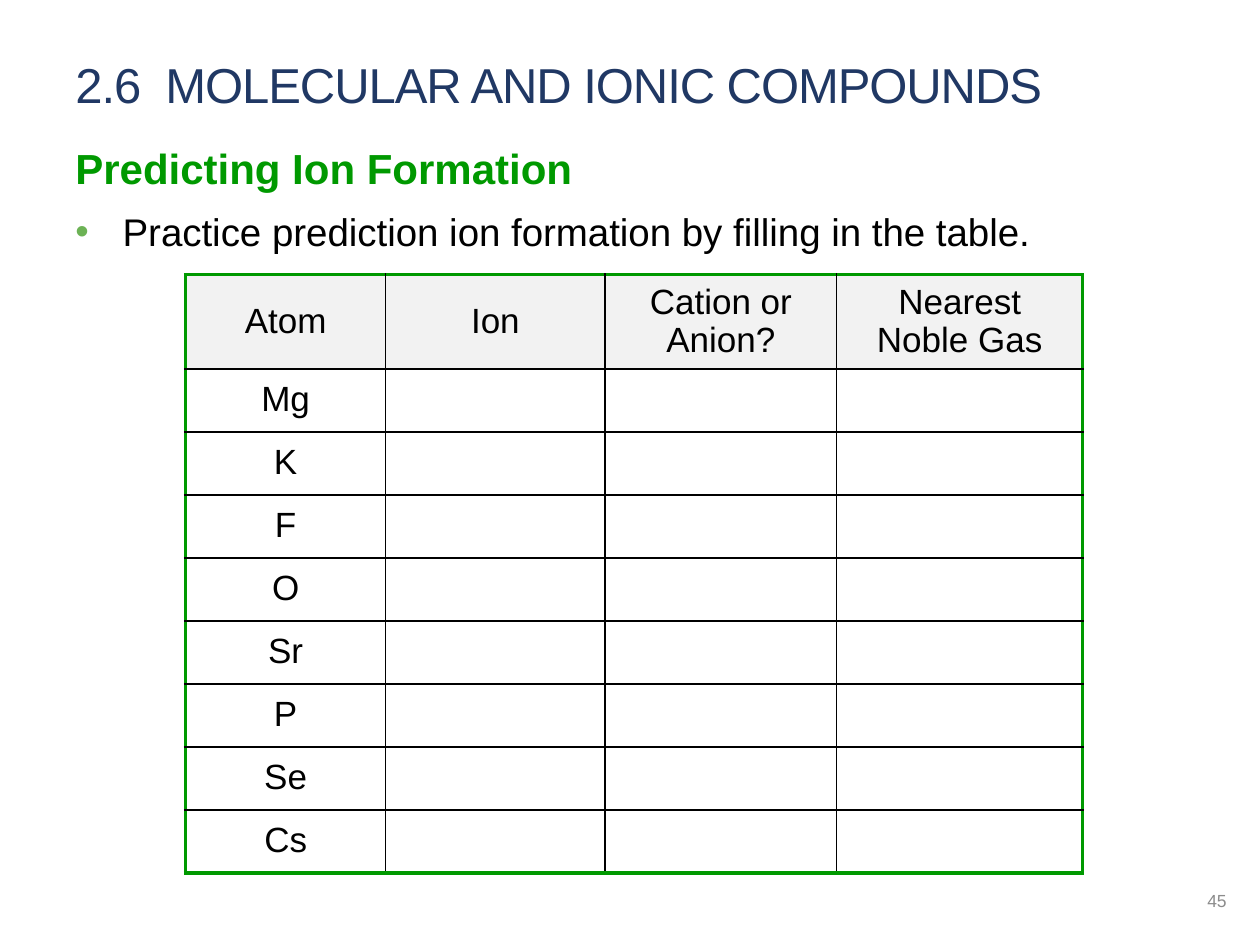
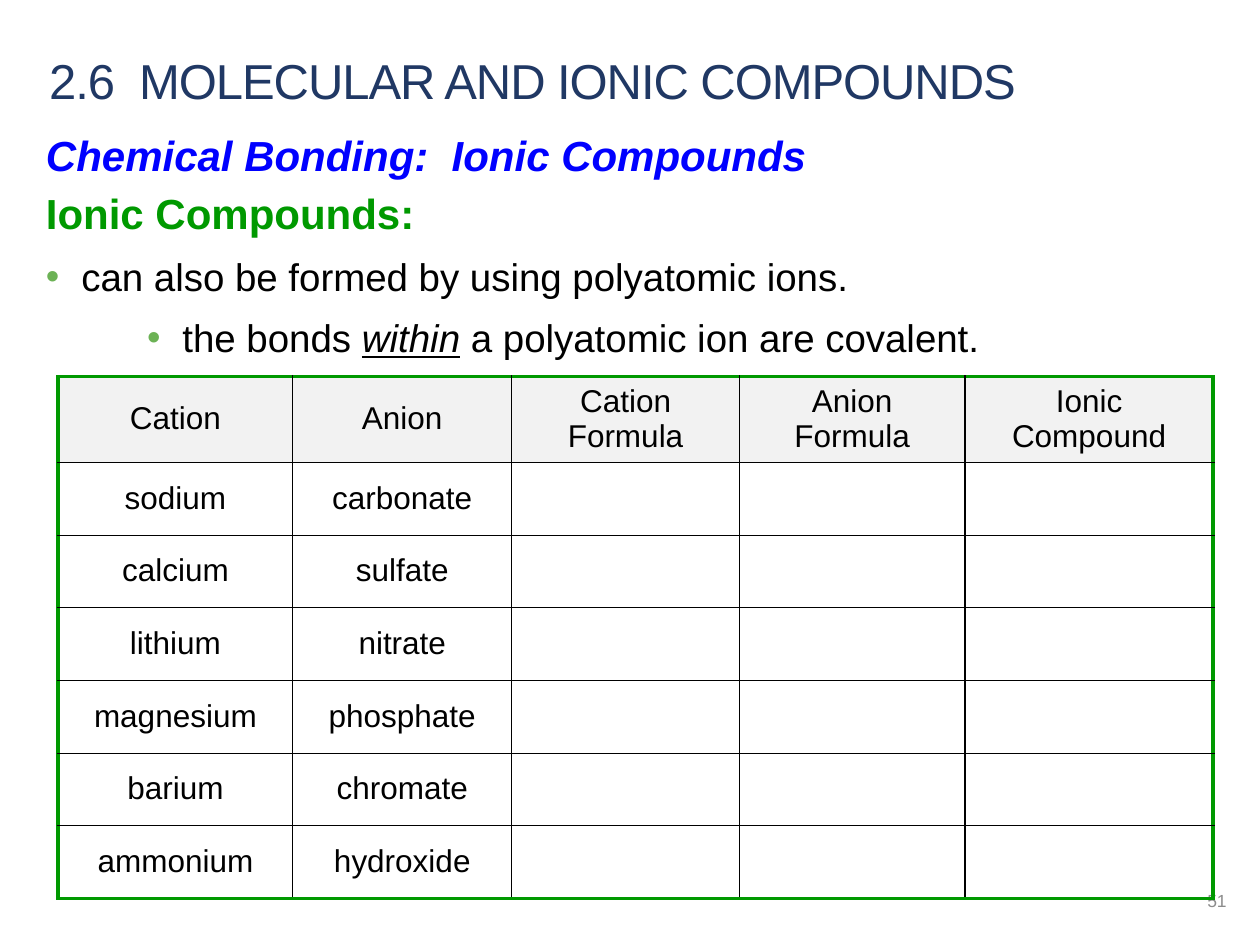
from dataclasses import dataclass

from lxml.etree import SubElement
from pptx import Presentation
from pptx.dml.color import RGBColor
from pptx.enum.text import MSO_ANCHOR, PP_ALIGN
from pptx.oxml.ns import qn
from pptx.util import Pt


@dataclass(frozen=True)
class Theme:
    font: str = "Arial"
    navy: str = "203864"
    green: str = "009900"
    blue: str = "0000FF"
    bullet: str = "6CB255"
    black: str = "000000"
    grey: str = "8C8C8C"
    header_fill: str = "F2F2F2"
    title_size: float = 28
    heading_size: float = 24
    body_size: float = 22
    number_size: float = 10
    tracking: float = -0.6
    grid_line: float = 0.75
    frame_line: float = 2.25
    body_spacing: float = 1.1
    cell_spacing: float = 0.97


THEME = Theme()
HEADING = dict(size=THEME.heading_size, bold=True, line_spacing=THEME.body_spacing, after=6)
BODY = dict(size=THEME.body_size, line_spacing=THEME.body_spacing, after=6)


def write(frame, text, size, color=THEME.black, bold=False, italic=False,
          align=PP_ALIGN.LEFT, line_spacing=1.0, after=0, tracking=0,
          bullet_left=None, bullet_hang=0):
    """Add a paragraph; every second part of a tuple is italic and underlined."""
    first = frame.paragraphs[0]
    paragraph = frame.add_paragraph() if first.runs else first
    paragraph.alignment = align
    paragraph.line_spacing = line_spacing
    paragraph.space_after = Pt(after)
    if bullet_left is not None:
        properties = paragraph._p.get_or_add_pPr()
        properties.set("marL", str(Pt(bullet_left)))
        properties.set("indent", str(-Pt(bullet_hang)))
        bullet_color = SubElement(properties, qn("a:buClr"))
        SubElement(bullet_color, qn("a:srgbClr"), val=THEME.bullet)
        SubElement(properties, qn("a:buFont"), typeface=THEME.font)
        SubElement(properties, qn("a:buChar"), char="•")
    parts = (text,) if isinstance(text, str) else text
    for index, part in enumerate(parts):
        run = paragraph.add_run()
        run.text = part
        emphasis = index % 2 == 1
        run.font.name = THEME.font
        run.font.size = Pt(size)
        run.font.bold = bold
        run.font.italic = italic or emphasis
        run.font.underline = emphasis
        run.font.color.rgb = RGBColor.from_string(color)
        if tracking:
            run._r.get_or_add_rPr().set("spc", str(round(tracking * 100)))


def add_frame(slide, box, anchor=MSO_ANCHOR.TOP, inset=(7.2, 3.6)):
    frame = slide.shapes.add_textbox(*map(Pt, box)).text_frame
    frame.word_wrap = True
    frame.vertical_anchor = anchor
    frame.margin_left = frame.margin_right = Pt(inset[0])
    frame.margin_top = frame.margin_bottom = Pt(inset[1])
    return frame


def add_section_slide(deck, left, top, number):
    slide = deck.slides.add_slide(deck.slide_layouts[6])
    title = add_frame(slide, (left, top, 672, 41), MSO_ANCHOR.BOTTOM)
    write(title, "2.6  MOLECULAR AND IONIC COMPOUNDS", size=THEME.title_size,
          color=THEME.navy, tracking=THEME.tracking)
    page_number = add_frame(slide, (546, 500.5, 162, 28.75), MSO_ANCHOR.MIDDLE)
    write(page_number, number, size=THEME.number_size, color=THEME.grey,
          align=PP_ALIGN.RIGHT)
    return slide


def draw_borders(cell, outer_sides):
    properties = cell._tc.get_or_add_tcPr()
    for side in "LRTB":
        outer = side in outer_sides
        width = THEME.frame_line if outer else THEME.grid_line
        line = SubElement(properties, qn(f"a:ln{side}"), w=str(Pt(width)))
        fill = SubElement(line, qn("a:solidFill"))
        SubElement(fill, qn("a:srgbClr"), val=THEME.green if outer else THEME.black)


def add_worksheet(slide, left, top, widths, header_height, row_height, size, headers, rows):
    blanks = [""] * len(headers)
    grid = [headers] + [(list(row) + blanks)[:len(headers)] for row in rows]
    height = header_height + row_height * len(rows)
    table = slide.shapes.add_table(len(grid), len(headers), Pt(left), Pt(top),
                                   Pt(sum(widths)), Pt(height)).table
    table.first_row = table.horz_banding = False
    for column, width in zip(table.columns, widths):
        column.width = Pt(width)
    last_row, last_column = len(grid) - 1, len(headers) - 1
    for r, entries in enumerate(grid):
        table.rows[r].height = Pt(row_height if r else header_height)
        for c, entry in enumerate(entries):
            cell = table.cell(r, c)
            cell.vertical_anchor = MSO_ANCHOR.MIDDLE
            edges = {"L": c == 0, "R": c == last_column, "T": r == 0, "B": r == last_row}
            draw_borders(cell, [side for side, outer in edges.items() if outer])
            if r:
                cell.fill.background()
            else:
                cell.fill.solid()
                cell.fill.fore_color.rgb = RGBColor.from_string(THEME.header_fill)
            for line in entry.splitlines():
                write(cell.text_frame, line, size=size, align=PP_ALIGN.CENTER,
                      line_spacing=THEME.cell_spacing)


def add_ion_formation(deck):
    slide = add_section_slide(deck, 36, 27.5, "45")
    practice = add_frame(slide, (36, 75, 672.5, 136.75))
    write(practice, "Predicting Ion Formation", color=THEME.green, **HEADING)
    write(practice, "Practice prediction ion formation by filling in the table.",
          bullet_left=27, bullet_hang=27, **BODY)
    atoms = ("Mg", "K", "F", "O", "Sr", "P", "Se", "Cs")
    add_worksheet(slide, 106, 157, (114.5, 125.25, 132.5, 140.5), 52, 36, 20,
                  ("Atom", "Ion", "Cation or Anion?", "Nearest Noble Gas"),
                  [(atom,) for atom in atoms])


def add_polyatomic_compounds(deck):
    slide = add_section_slide(deck, 21, 25, "51")
    inset = (5.25, 2.75)
    compounds = add_frame(slide, (21, 101.5, 699, 291), inset=inset)
    write(compounds, "Ionic Compounds:", color=THEME.green, **HEADING)
    write(compounds, "can also be formed by using polyatomic ions.",
          bullet_left=20.25, bullet_hang=20.25, **BODY)
    write(compounds, ("the bonds ", "within", " a polyatomic ion are covalent."),
          bullet_left=78, bullet_hang=20.25, **BODY)
    bonding = add_frame(slide, (21, 68.5, 492, 34), inset=inset)
    write(bonding, "Chemical Bonding:  Ionic Compounds", color=THEME.blue,
          italic=True, **HEADING)
    add_worksheet(slide, 33.25, 215.25, (134, 125.25, 130, 129, 141.75), 47.5, 41.5, 18,
                  ("Cation", "Anion", "Cation Formula", "Anion Formula", "Ionic\nCompound"),
                  (("sodium", "carbonate"), ("calcium", "sulfate"), ("lithium", "nitrate"),
                   ("magnesium", "phosphate"), ("barium", "chromate"),
                   ("ammonium", "hydroxide")))


def main():
    deck = Presentation()
    deck.slide_width, deck.slide_height = Pt(720), Pt(540)
    add_ion_formation(deck)
    add_polyatomic_compounds(deck)
    deck.save("out.pptx")


if __name__ == "__main__":
    main()
